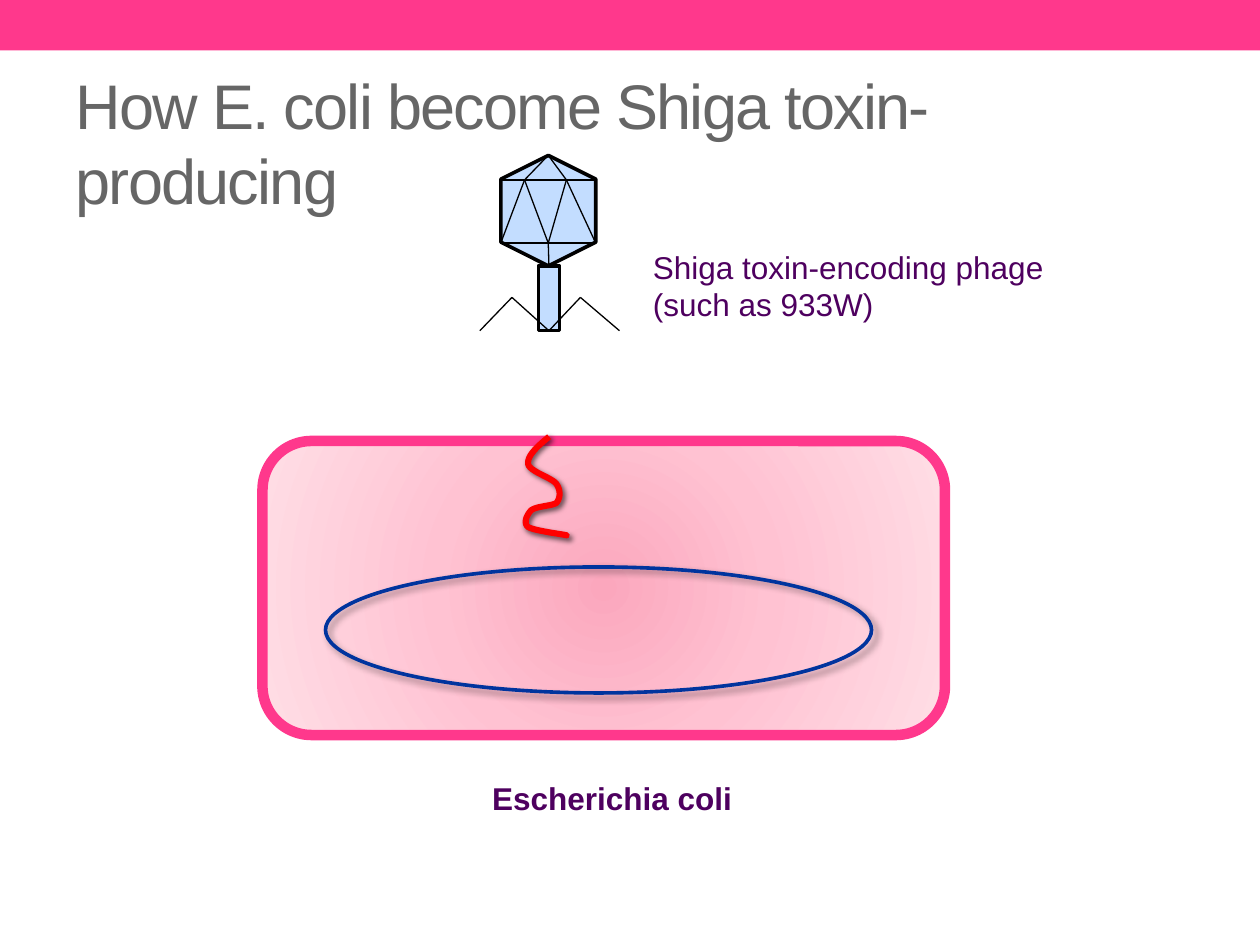
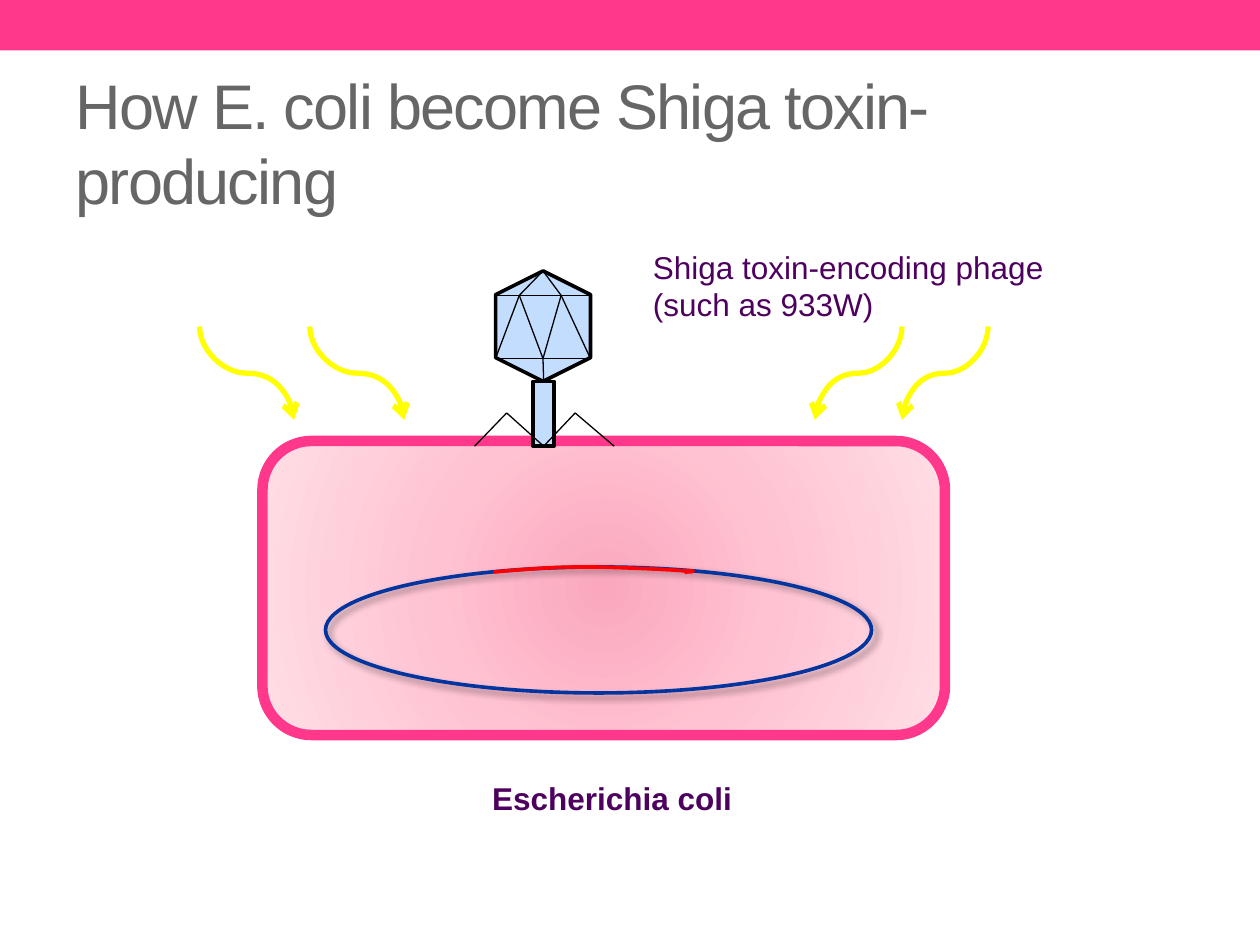
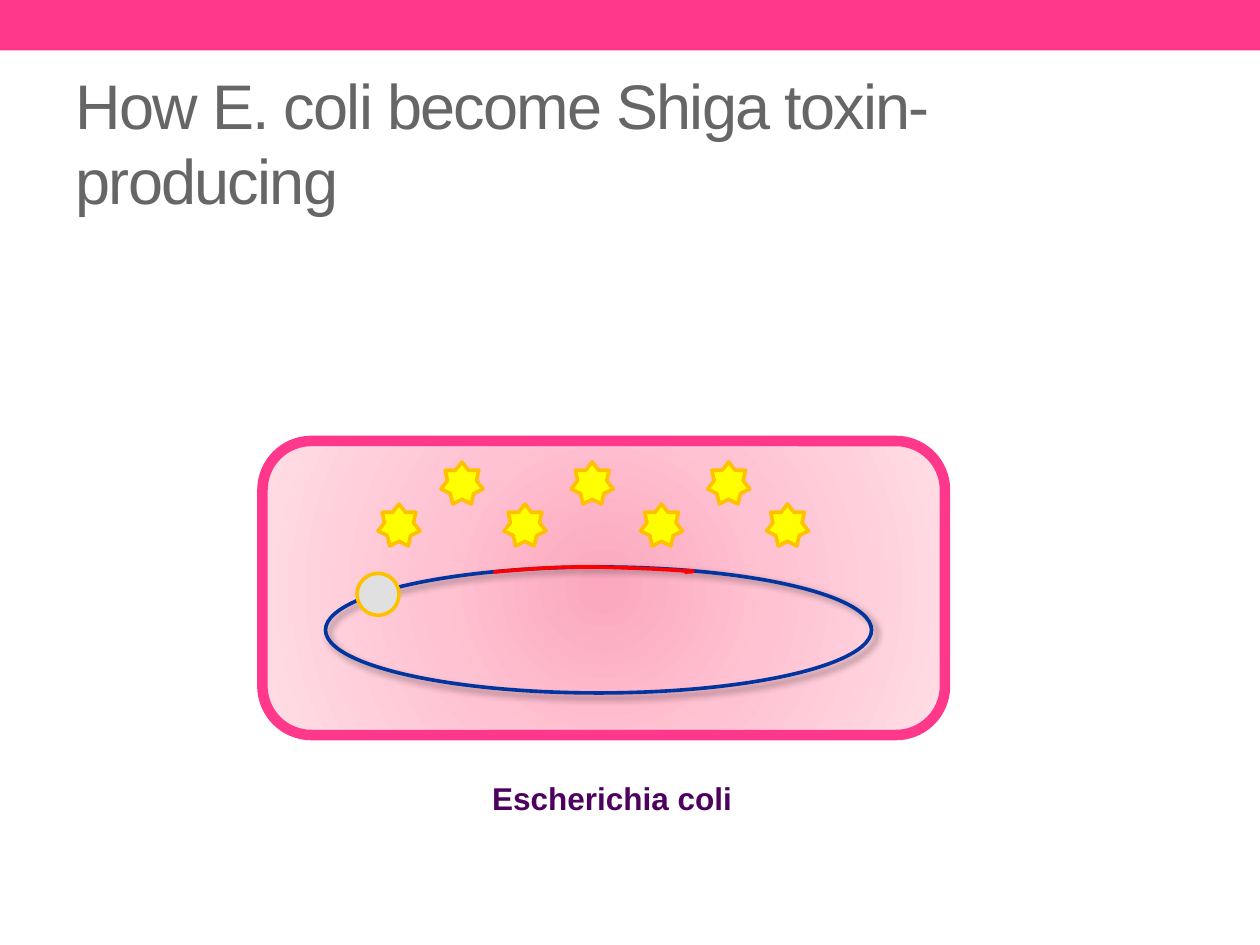
from dataclasses import dataclass

from lxml.etree import SubElement
from pptx import Presentation
from pptx.dml.color import RGBColor
from pptx.enum.shapes import MSO_CONNECTOR, MSO_SHAPE
from pptx.enum.text import MSO_ANCHOR, MSO_AUTO_SIZE, PP_ALIGN
from pptx.oxml.ns import qn
from pptx.util import Inches, Pt

RECTANGLE, ROUNDED = MSO_SHAPE.RECTANGLE, MSO_SHAPE.ROUNDED_RECTANGLE
OVAL, HEXAGON, STAR = MSO_SHAPE.OVAL, MSO_SHAPE.HEXAGON, MSO_SHAPE.STAR_7_POINT
STRAIGHT, CURVE = MSO_CONNECTOR.STRAIGHT, MSO_CONNECTOR.CURVE
MIDDLE, TOP, LEFT = MSO_ANCHOR.MIDDLE, MSO_ANCHOR.TOP, PP_ALIGN.LEFT
NO_FIT = MSO_AUTO_SIZE.NONE

COLORS = {
    "pink": "FF388C", "title": "666666", "purple": "4E005F", "ink": "000000",
    "phage": "C3DDFF", "chromosome": "00349E", "viral": "FF0000",
    "yellow": "FFFF00", "gold": "FFC000", "grey": "E0E0E0",
    "core": "FBA7BD", "mid": "FFC2D2", "rim": "FFDEE6",
}
FONT = "Arial"
TITLE = "How E. coli become Shiga toxin-producing"
UNIT = Inches(1) / 12
COLUMNS, ROWS = 120, 90
THIN, OUTLINE = 0.75, 2.08

VIRAL_DNA = [
    (27.3, -0.4), (26.2, 0.5), (25.2, 1.4), (25.3, 2.2), (25.4, 2.9), (27.6, 3.5),
    (28, 4.1), (28.4, 4.7), (28.4, 5.4), (28, 5.9), (27.6, 6.2), (26.1, 6.2),
    (25.6, 6.6), (25.2, 7), (24.8, 7.8), (25.3, 8.2), (25.8, 8.5), (27.9, 8.8),
    (28.5, 8.9), (29.1, 9), (29, 9), (28.9, 9),
]
PROPHAGE = [
    (22, 12.48), (24.8, 12.24), (27.6, 12), (30.6, 12), (33.6, 12), (38.5, 12.24),
    (40, 12.36), (41.7, 12.36), (40.9, 12.48), (40.2, 12.48),
]


@dataclass
class Box:
    """A rectangle in grid columns and rows."""
    left: float
    top: float
    width: float
    height: float

    def inner(self, left, top, width, height):
        """Return a box offset from this one's corner."""
        return Box(self.left + left, self.top + top, width, height)

    def share(self, across, down):
        """Return the point at the given shares of the box."""
        return self.left + across * self.width, self.top + down * self.height

    def between(self, left, top, right, bottom):
        """Return the box between two points given as shares."""
        start, end = self.share(left, top), self.share(right, bottom)
        return Box(*start, end[0] - start[0], end[1] - start[1])

    def lengths(self):
        """Return left, top, width and height in EMU."""
        return to_emu(self.left, self.top, self.width, self.height)


CELL = Box(25, 42, 65, 28)


def to_emu(*values):
    """Convert grid units to EMU."""
    return [round(value * UNIT) for value in values]


def paint(name):
    """Return a named colour."""
    return RGBColor.from_string(COLORS[name])


def style(shape, fill=None, line=None, width=OUTLINE, shadow=None):
    """Set fill, line and an optional (alpha, blur, distance) shadow."""
    if fill:
        shape.fill.solid()
        shape.fill.fore_color.rgb = paint(fill)
    else:
        shape.fill.background()
    if line:
        shape.line.color.rgb = paint(line)
        shape.line.width = Pt(width)
    else:
        shape.line.fill.background()
    shape.shadow.inherit = False
    if shadow:
        alpha, blur, distance = shadow
        effects = shape.element.spPr.find(qn("a:effectLst"))
        outer = SubElement(effects, qn("a:outerShdw"), blurRad=str(Pt(blur)),
                           dist=str(Pt(distance)), dir=str(45 * 60000))
        color = SubElement(outer, qn("a:srgbClr"), val=COLORS["ink"])
        SubElement(color, qn("a:alpha"), val=str(alpha * 1000))


def add_figure(shapes, kind, box, **format):
    """Add a styled preset shape."""
    shape = shapes.add_shape(kind, *box.lengths())
    style(shape, **format)
    return shape


def add_line(shapes, start, end, color, width, kind=STRAIGHT):
    """Add a connector without a shadow."""
    connector = shapes.add_connector(kind, *to_emu(*start, *end))
    connector.line.color.rgb = paint(color)
    connector.line.width = Pt(width)
    SubElement(connector.element.spPr, qn("a:effectLst"))
    return connector


def write(frame, text, size=18, color="purple", bold=False, wrap=False, anchor=TOP):
    """Fill a text frame, one paragraph for each line."""
    frame.text = text
    frame.word_wrap = wrap
    frame.auto_size = NO_FIT
    frame.vertical_anchor = anchor
    for para in frame.paragraphs:
        para.alignment = LEFT
        for span in para.runs:
            span.font.name = FONT
            span.font.size = Pt(size)
            span.font.bold = bold
            span.font.color.rgb = paint(color)


def add_label(page, text, box, **format):
    """Add a text box."""
    write(page.shapes.add_textbox(*box.lengths()).text_frame, text, **format)


def bezier_points(controls, steps=12):
    """Sample a chain of cubic curves."""
    points = [controls[0]]
    for first in range(0, len(controls) - 1, 3):
        curve = controls[first:first + 4]
        for step in range(1, steps + 1):
            t = step / steps
            weights = ((1 - t) ** 3, 3 * t * (1 - t) ** 2, 3 * t * t * (1 - t), t ** 3)
            points.append(tuple(sum(weight * point[axis] for weight, point in zip(weights, curve))
                                for axis in (0, 1)))
    return points


def add_strand(page, cell, controls, **format):
    """Draw a red DNA strand inside the cell."""
    points = [to_emu(cell.left + x, cell.top + y) for x, y in bezier_points(controls)]
    builder = page.shapes.build_freeform(*points[0], scale=1.0)
    builder.add_line_segments(points[1:], close=False)
    style(builder.convert_to_shape(), line="viral", **format)


def add_cell(page, cell):
    """Draw the bacterium, its chromosome and its name."""
    body = add_figure(page.shapes, ROUNDED, cell, line="pink", width=6)
    body.fill.gradient()
    gradient = body.element.spPr.find(qn("a:gradFill"))
    gradient.clear()
    stops = SubElement(gradient, qn("a:gsLst"))
    for position, name in ((0, "core"), (45, "mid"), (100, "rim")):
        stop = SubElement(stops, qn("a:gs"), pos=str(position * 1000))
        SubElement(stop, qn("a:srgbClr"), val=COLORS[name])
    radial = SubElement(gradient, qn("a:path"), {"path": "circle"})
    SubElement(radial, qn("a:fillToRect"), {side: "50000" for side in "ltrb"})
    add_figure(page.shapes, OVAL, cell.inner(6, 12, 52, 12), line="chromosome",
               shadow=(40, 4, 3))
    add_label(page, "Escherichia coli", cell.inner(20.7, 31.6, 25.4, 4.8), bold=True)


def add_phage(page, box):
    """Draw a phage with its head, tail and legs."""
    shapes = page.shapes.add_group_shape().shapes
    head = box.between(0.15, 0, 0.83, 0.63)
    shift = (head.width - head.height) / 2
    upright = head.inner(shift, -shift, head.height, head.width)
    add_figure(shapes, HEXAGON, upright, fill="phage", line="ink").rotation = 90
    tail = add_figure(shapes, RECTANGLE, box.between(0.42, 0.63, 0.57, 1),
                      fill="phage", line="ink")
    apex, hub, neck, foot = (0.49, 0), (0.49, 0.5), (0.49, 0.63), (0.49, 1)
    edges = [((0.15, 0.14), (0.83, 0.14)), ((0.15, 0.5), (0.83, 0.5))]
    for side, upper, knee, toe in ((0.15, 0.32, 0.23, 0), (0.83, 0.62, 0.72, 1)):
        edges += [(hub, (upper, 0.14)), ((side, 0.5), (upper, 0.14)),
                  ((upper, 0.14), apex), ((knee, 0.81), (toe, 1))]
    for start, end in edges:
        add_line(shapes, box.share(*start), box.share(*end), "ink", THIN)
    for start, end, side in ((neck, hub, 0), (foot, (0.23, 0.81), 2), (foot, (0.72, 0.81), 2)):
        joined = add_line(shapes, box.share(*start), box.share(*end), "ink", THIN)
        joined.begin_connect(tail, side)


def add_phage_stage(page, cell, column, row):
    """Place the phage and its label above the cell."""
    add_phage(page, cell.inner(column, row, 13.3, 16.7))
    add_label(page, "Shiga toxin-encoding phage\n(such as 933W)", cell.inner(36, -19, 40, 8.5))


def add_arrow(page, start, across, down):
    """Draw a curved arrow that leaves and arrives vertically."""
    sign = 1 if across > 0 else -1
    center = start[0] + across / 2, start[1] + down / 2
    reach, rise = sign * down / 2, abs(across) / 2
    arrow = add_line(page.shapes, (center[0] + reach, center[1] - rise),
                     (center[0] - reach, center[1] + rise), "yellow", 3, CURVE)
    properties = arrow.element.spPr
    properties.find(qn("a:xfrm")).set("rot", str((180 + sign * 90) * 60000))
    SubElement(properties.find(qn("a:ln")), qn("a:tailEnd"), type="arrow")


def add_arrows(page, cell):
    """Draw two stress arrows on each side of the phage."""
    for column, across in ((-6, 9), (4.5, 9), (69.1, -8.2), (60.9, -8.3)):
        add_arrow(page, (cell.left + column, cell.top - 10.9), across, 8.9)


def add_toxins(page, cell):
    """Draw the ribosome and the zigzag of toxins."""
    add_figure(page.shapes, OVAL, cell.inner(9, 12.6, 4, 4), fill="grey", line="gold")
    for index, column in enumerate((11, 17, 23, 29.4, 36, 42.4, 48)):
        row = 2 if index % 2 else 6
        add_figure(page.shapes, STAR, cell.inner(column, row, 4, 4),
                   fill="yellow", line="gold")


def add_band(deck, page):
    """Put the top band on the master, behind every slide."""
    band = add_figure(page.shapes, RECTANGLE, Box(0, 0, COLUMNS, 4.8), fill="pink")
    deck.slide_master.shapes.element.insert(2, band.element)


def add_page(deck):
    """Add a slide with the shared title."""
    page = deck.slides.add_slide(deck.slide_layouts[5])
    title = page.shapes.title
    title.left, title.top, title.width, title.height = Box(6, 7, 108, 13).lengths()
    write(title.text_frame, TITLE, size=36, color="title", wrap=True, anchor=MIDDLE)
    for properties in title.element.iter(qn("a:rPr")):
        properties.set("spc", "-100")
    return page


def build_injection(page):
    """Show the phage injecting its DNA."""
    add_cell(page, CELL)
    add_phage_stage(page, CELL, 20.7, -27.2)
    add_strand(page, CELL, VIRAL_DNA, width=3.5, shadow=(60, 3, 2))


def build_integration(page):
    """Show the integrated DNA under stress."""
    add_cell(page, CELL)
    add_strand(page, CELL, PROPHAGE)
    add_phage_stage(page, CELL, 20.2, -16.2)
    add_arrows(page, CELL)


def build_toxin(page):
    """Show the cell making toxin."""
    add_cell(page, CELL)
    add_strand(page, CELL, PROPHAGE)
    add_toxins(page, CELL)


def main():
    """Build and save the deck."""
    deck = Presentation()
    deck.slide_width, deck.slide_height = to_emu(COLUMNS, ROWS)
    pages = [add_page(deck) for _ in range(3)]
    add_band(deck, pages[0])
    for build, page in zip((build_injection, build_integration, build_toxin), pages):
        build(page)
    deck.save("out.pptx")


if __name__ == "__main__":
    main()
